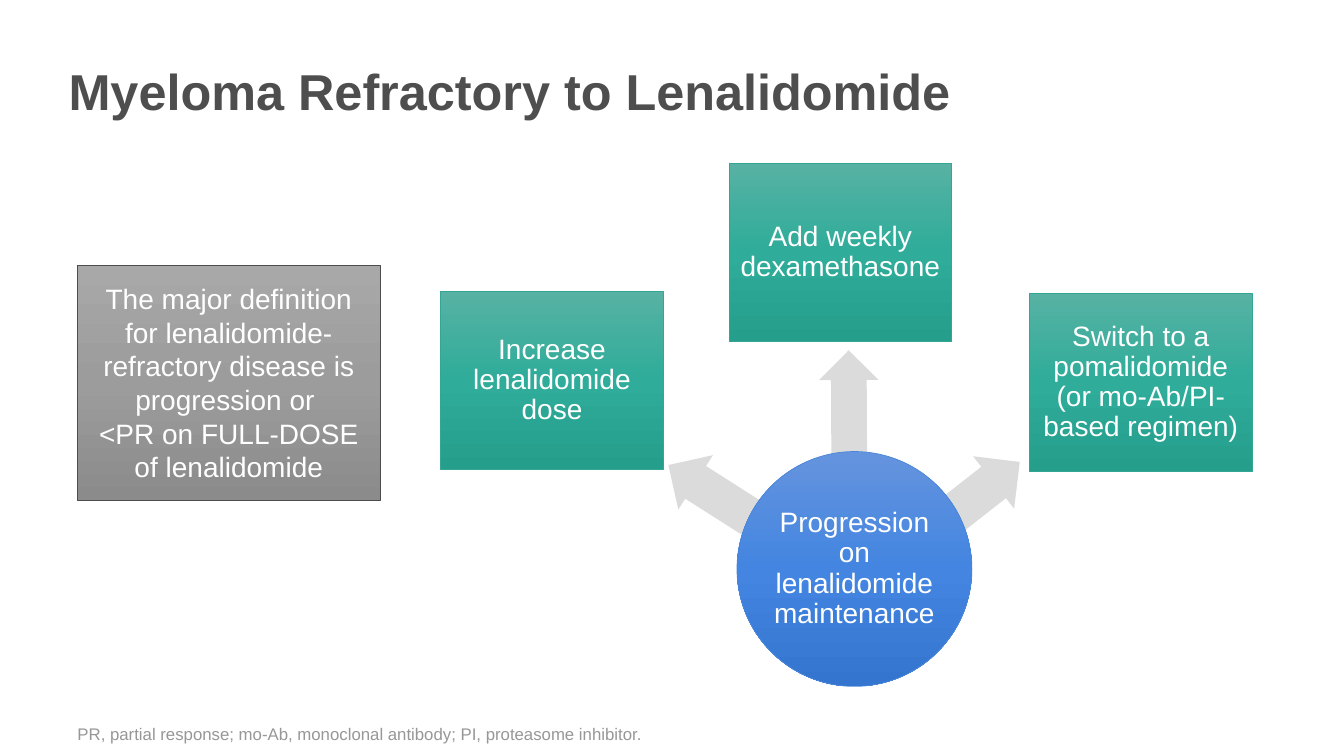
from dataclasses import dataclass

from lxml import etree
from pptx import Presentation
from pptx.dml.color import RGBColor
from pptx.enum.shapes import MSO_SHAPE
from pptx.enum.text import MSO_ANCHOR, PP_ALIGN
from pptx.oxml.ns import qn
from pptx.util import Inches, Pt

RECTANGLE, OVAL, LEFT_ARROW = MSO_SHAPE.RECTANGLE, MSO_SHAPE.OVAL, MSO_SHAPE.LEFT_ARROW
LEFT, CENTER = PP_ALIGN.LEFT, PP_ALIGN.CENTER
MIDDLE, BOTTOM = MSO_ANCHOR.MIDDLE, MSO_ANCHOR.BOTTOM

FONT = "Arial"
COLORS = {"title": "4D4E4D", "footnote": "979797", "white": "FFFFFF", "arrow": "DBDBDB"}
GRADIENTS = {
    "gray": ("A8A8A8", "9C9C9C", "8B8B8B"),
    "green": ("57B2A3", "2FAC9A", "259E8C"),
    "blue": ("6594DE", "4385E0", "3375CF"),
}
OUTLINES = {"gray": "4D4D4D", "green": "35A696", "blue": "4A86D9"}
OPTION_SIZE = (2.21, 1.77)
CIRCLE_SIZE = (2.33, 2.33)


@dataclass
class Panel:
    lines: tuple[str, ...]
    left: float
    top: float
    size: tuple[float, float] = OPTION_SIZE
    theme: str = "green"
    outline: MSO_SHAPE = RECTANGLE
    inset: float = 0.09
    line_spacing: float = 0.9


@dataclass
class Arrow:
    left: float
    top: float
    width: float
    height: float
    rotation: float


PANELS = (
    Panel(("The major definition for lenalidomide-refractory disease is progression or ",
           "<PR on FULL-DOSE of lenalidomide"),
          0.77, 2.63, (3, 2.33), "gray", inset=0.1, line_spacing=1.0),
    Panel(("Increase lenalidomide dose",), 4.37, 2.89),
    Panel(("Add weekly dexamethasone",), 7.23, 1.62),
    Panel(("Switch to a pomalidomide (or mo-Ab/PI-based regimen)",), 10.21, 2.91),
    Panel(("Progression on lenalidomide maintenance",),
          7.31, 4.48, CIRCLE_SIZE, "blue", OVAL, inset=0.35),
)
ARROWS = (
    Arrow(6.54, 4.6, 1.14, 0.64, 32.5),
    Arrow(7.88, 3.72, 1.08, 0.59, 89.7),
    Arrow(9.31, 4.53, 0.9, 0.66, 141.9),
)


def write_text(frame, lines: tuple[str, ...], size: float, color: str, align: PP_ALIGN,
               anchor: MSO_ANCHOR, bold: bool = False, line_spacing: float = 1.0) -> None:
    frame.word_wrap = True
    frame.vertical_anchor = anchor
    paragraph = frame.paragraphs[0]
    paragraph.alignment = align
    paragraph.line_spacing = line_spacing
    for index, line in enumerate(lines):
        if index:
            paragraph.add_line_break()
        run = paragraph.add_run()
        run.text = line
        run.font.name = FONT
        run.font.size = Pt(size)
        run.font.bold = bold
        run.font.color.rgb = RGBColor.from_string(COLORS[color])


def fill_downward(shape, colors: tuple[str, ...]) -> None:
    """Fill with evenly spaced gradient stops from top to bottom."""
    shape.fill.gradient()
    shape.fill.gradient_angle = 270
    stops = shape.element.spPr.find(qn("a:gradFill")).find(qn("a:gsLst"))
    for stop in list(stops):
        stops.remove(stop)
    for index, color in enumerate(colors):
        position = 100000 * index // (len(colors) - 1)
        stop = etree.SubElement(stops, qn("a:gs"), pos=str(position))
        etree.SubElement(stop, qn("a:srgbClr"), val=color)


def draw_panel(slide, panel: Panel) -> None:
    shape = slide.shapes.add_shape(
        panel.outline, Inches(panel.left), Inches(panel.top), *map(Inches, panel.size))
    shape.shadow.inherit = False
    fill_downward(shape, GRADIENTS[panel.theme])
    shape.line.color.rgb = RGBColor.from_string(OUTLINES[panel.theme])
    shape.line.width = Pt(0.5)
    frame = shape.text_frame
    # The circle's text area is already inscribed, so it needs no further inset.
    inset = Inches(0 if panel.outline == OVAL else panel.inset)
    frame.margin_left = frame.margin_right = inset
    frame.margin_top = frame.margin_bottom = inset
    write_text(frame, panel.lines, 20, "white", CENTER, MIDDLE,
               line_spacing=panel.line_spacing)


def draw_arrow(slide, arrow: Arrow) -> None:
    shape = slide.shapes.add_shape(LEFT_ARROW, Inches(arrow.left), Inches(arrow.top),
                                   Inches(arrow.width), Inches(arrow.height))
    shape.rotation = arrow.rotation
    shape.adjustments[0] = 0.6
    shape.adjustments[1] = 0.5
    shape.shadow.inherit = False
    shape.fill.solid()
    shape.fill.fore_color.rgb = RGBColor.from_string(COLORS["arrow"])
    shape.line.fill.background()


def main() -> None:
    presentation = Presentation()
    presentation.slide_width = Inches(13.33)
    presentation.slide_height = Inches(7.5)
    slide = presentation.slides.add_slide(presentation.slide_layouts.get_by_name("Title Only"))

    title = slide.shapes.title
    title.left, title.top = Inches(0.58), Inches(0.17)
    title.width, title.height = Inches(11.5), Inches(1.45)
    write_text(title.text_frame, ("Myeloma Refractory to Lenalidomide",),
               36, "title", LEFT, MIDDLE, bold=True)

    for arrow in ARROWS:
        draw_arrow(slide, arrow)
    for panel in PANELS:
        draw_panel(slide, panel)

    footnote = slide.shapes.add_textbox(Inches(0.67), Inches(6.95), Inches(11.75), Inches(0.48))
    write_text(footnote.text_frame,
               ("PR, partial response; mo-Ab, monoclonal antibody; PI, proteasome inhibitor.",),
               12, "footnote", LEFT, BOTTOM)

    presentation.save("out.pptx")


if __name__ == "__main__":
    main()
